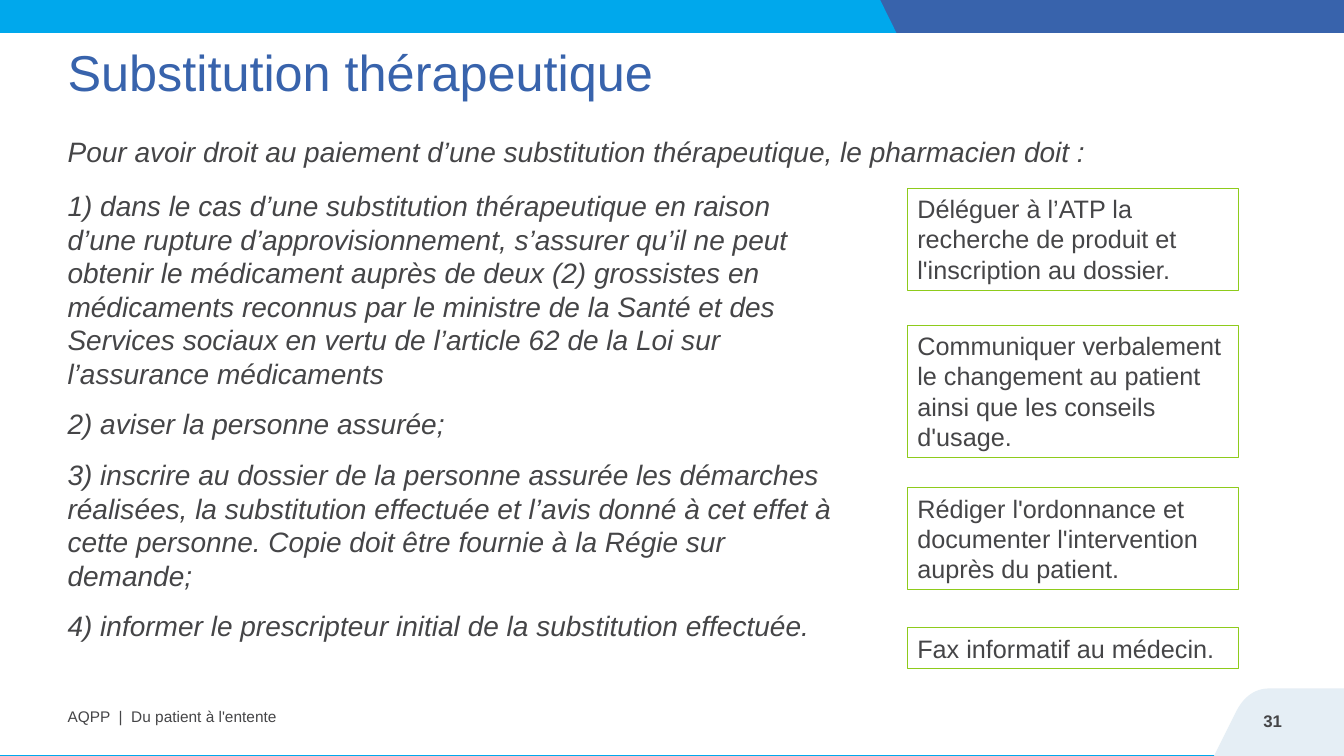
from pptx import Presentation
from pptx.dml.color import RGBColor
from pptx.enum.shapes import MSO_SHAPE
from pptx.enum.text import MSO_ANCHOR, MSO_AUTO_SIZE, PP_ALIGN
from pptx.util import Inches, Pt

RECTANGLE = MSO_SHAPE.RECTANGLE
TOP, MIDDLE = MSO_ANCHOR.TOP, MSO_ANCHOR.MIDDLE
LEFT = PP_ALIGN.LEFT
NO_AUTOFIT = MSO_AUTO_SIZE.NONE

NAVY, SKY, WHITE, PALE = "3863AC", "00A8EC", "FFFFFF", "E5EEF5"
GREY, GREEN = "454547", "8ECB1B"
WIDTH, HEIGHT, MARGIN = 13.33, 7.5, 0.67
BAND = 0.33
BODY_TOP = 1.87
TASK_LEFT, TASK_WIDTH = 9, 3.28


def paint(fill, colour):
    fill.solid()
    fill.fore_color.rgb = RGBColor.from_string(colour)


def write(shape, *texts, size, colour=GREY, bold=False, italic=False,
          anchor=TOP, spacing=None, after=0, inset=(0, 0)):
    frame = shape.text_frame
    frame.word_wrap = True
    frame.auto_size = NO_AUTOFIT
    frame.vertical_anchor = anchor
    frame.margin_left = frame.margin_right = Inches(inset[0])
    frame.margin_top = frame.margin_bottom = Inches(inset[1])
    for index, text in enumerate(texts):
        paragraph = frame.add_paragraph() if index else frame.paragraphs[0]
        paragraph.alignment = LEFT
        paragraph.space_before = Pt(0)
        paragraph.space_after = Pt(after)
        if spacing:
            paragraph.line_spacing = spacing
        run = paragraph.add_run()
        run.text = text
        font = run.font
        font.name, font.size = "Arial", Pt(size)
        font.bold, font.italic = bold, italic
        paint(font.fill, colour)


presentation = Presentation()
presentation.slide_width = Inches(WIDTH)
presentation.slide_height = Inches(HEIGHT)
slide = presentation.slides.add_slide(presentation.slide_layouts[5])
shapes = slide.shapes
paint(slide.background.fill, NAVY)

curve = [(12.59, 6.83), (12.44, 6.83), (12.33, 6.92), (12.26, 7.06)]
corner = []
for step in range(13):
    t = step / 12
    weights = ((1 - t) ** 3, 3 * t * (1 - t) ** 2, 3 * t ** 2 * (1 - t), t ** 3)
    corner.append(tuple(sum(weight * point[axis] for weight, point in zip(weights, curve))
                        for axis in (0, 1)))

sky_band = [(0, HEIGHT), (0, 0), (8.73, 0), (12.43, HEIGHT)]
page_tab = [(WIDTH, 6.83), *corner, (12.04, HEIGHT), (WIDTH, HEIGHT)]
page_area = [(0, BAND), (WIDTH, BAND), (WIDTH, 7.49), (0, 7.49)]

for outline, colour in ((sky_band, SKY), (page_area, WHITE), (page_tab, PALE)):
    if outline is page_area:
        shape = shapes.add_shape(RECTANGLE, 0, Inches(BAND), Inches(WIDTH), Inches(7.16))
    else:
        points = [(Inches(x), Inches(y)) for x, y in outline]
        builder = shapes.build_freeform(*points[0])
        builder.add_line_segments(points[1:], close=True)
        shape = builder.convert_to_shape()
    paint(shape.fill, colour)
    shape.line.fill.background()
    shape.shadow.inherit = False

title = shapes.title
title.left, title.top = Inches(MARGIN), Inches(0.48)
title.width, title.height = Inches(10.21), Inches(0.86)
write(title, "Substitution thérapeutique", size=36, colour=NAVY, spacing=0.9)
title.element.getparent().append(title.element)

requirements = [
    "1) dans le cas d’une substitution thérapeutique en raison d’une rupture "
    "d’approvisionnement, s’assurer qu’il ne peut obtenir le médicament auprès de deux (2) "
    "grossistes en médicaments reconnus par le ministre de la Santé et des Services sociaux "
    "en vertu de l’article 62 de la Loi sur l’assurance médicaments",
    "2) aviser la personne assurée;",
    "3) inscrire au dossier de la personne assurée les démarches réalisées, la substitution "
    "effectuée et l’avis donné à cet effet à cette personne. Copie doit être fournie à la "
    "Régie sur demande;",
    "4) informer le prescripteur initial de la substitution effectuée.",
]
introduction = ["Pour avoir droit au paiement d’une substitution thérapeutique, "
                "le pharmacien doit :"]
body = {"size": 20, "italic": True, "after": 12}

for left, top, width, height, texts, style in (
    (MARGIN, 6.92, 10.5, 0.4, ["AQPP  |  Du patient à l'entente"],
     {"size": 11, "anchor": MIDDLE, "spacing": 0.9}),
    (12.53, 7.05, 0.8, 0.4, ["31"], {"size": 12, "bold": True}),
    (MARGIN, 1.33, 11.19, 0.4, introduction, body),
    (MARGIN, BODY_TOP, 7.64, 5.05, requirements, body),
):
    box = shapes.add_textbox(Inches(left), Inches(top), Inches(width), Inches(height))
    write(box, *texts, **style)

for top, height, task in (
    (BODY_TOP, 1.01, "Déléguer à l’ATP la recherche de produit et l'inscription au dossier."),
    (3.23, 1.31, "Communiquer verbalement le changement au patient ainsi que les conseils "
                 "d'usage."),
    (4.84, 1.01, "Rédiger l'ordonnance et documenter l'intervention auprès du patient."),
    (6.23, 0.4, "Fax informatif au médecin."),
):
    box = shapes.add_shape(RECTANGLE, Inches(TASK_LEFT), Inches(top),
                           Inches(TASK_WIDTH), Inches(height))
    box.fill.background()
    paint(box.line.fill, GREEN)
    box.line.width = Pt(0.75)
    box.shadow.inherit = False
    write(box, task, size=18, inset=(0.1, 0.05))

presentation.save("out.pptx")
